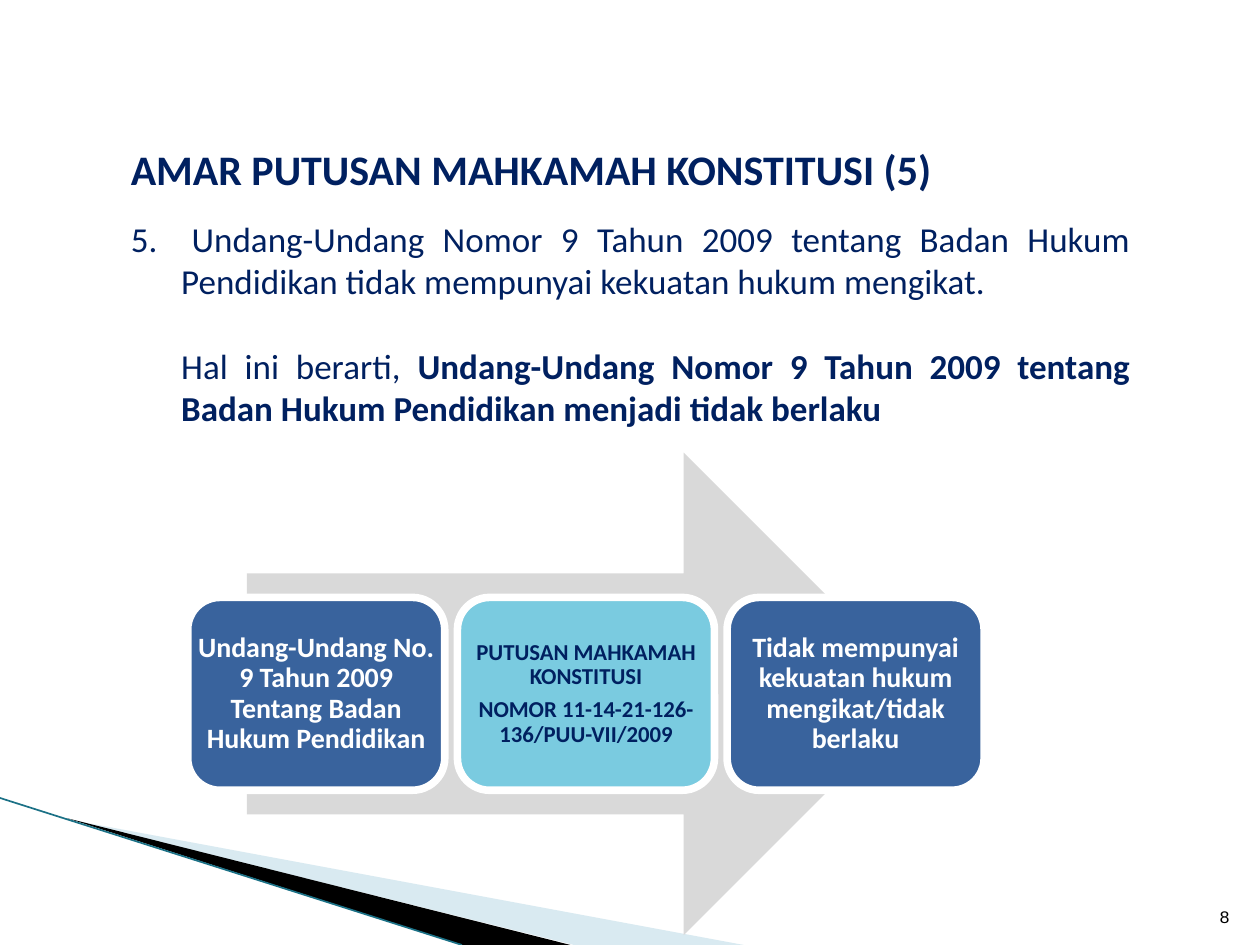
from dataclasses import dataclass

from lxml import etree
from pptx import Presentation
from pptx.dml.color import RGBColor
from pptx.enum.shapes import MSO_CONNECTOR, MSO_SHAPE
from pptx.enum.text import MSO_ANCHOR, PP_ALIGN
from pptx.oxml.ns import qn
from pptx.util import Pt

ARROW, ROUNDED = MSO_SHAPE.RIGHT_ARROW, MSO_SHAPE.ROUNDED_RECTANGLE
STRAIGHT = MSO_CONNECTOR.STRAIGHT
TOP, MIDDLE, BOTTOM = MSO_ANCHOR.TOP, MSO_ANCHOR.MIDDLE, MSO_ANCHOR.BOTTOM
CENTER, RIGHT, JUSTIFY = PP_ALIGN.CENTER, PP_ALIGN.RIGHT, PP_ALIGN.JUSTIFY


@dataclass(frozen=True)
class Theme:
    font: str = "Calibri"
    number_font: str = "Courier New"
    navy: str = "002060"
    blue: str = "39639D"
    cyan: str = "7ACBE0"
    grey: str = "D9D9D9"
    pale: str = "A0CBDC"
    teal: str = "1B7186"
    white: str = "FFFFFF"
    black: str = "000000"
    title: int = 24
    body: int = 20
    step: int = 16
    small: int = 13
    number: int = 10


class SlideBuilder:
    def __init__(self, slide, theme):
        self.s, self.theme = slide, theme

    def paint(self, sp, color, line=None, width=0):
        sp.shadow.inherit = False
        sp.fill.solid()
        sp.fill.fore_color.rgb = RGBColor.from_string(color)
        if line:
            sp.line.color.rgb = RGBColor.from_string(line)
            sp.line.width = Pt(width)
        else:
            sp.line.fill.background()

    def wedge(self, points, color, opacity=None):
        (x, y), *rest = [(Pt(px), Pt(py)) for px, py in points]
        builder = self.s.shapes.build_freeform(x, y)
        builder.add_line_segments(rest, close=True)
        sp = builder.convert_to_shape()
        self.paint(sp, color)
        if opacity:
            clr = next(sp.fill._xPr.iter(qn("a:srgbClr")))
            etree.SubElement(clr, qn("a:alpha"), val=str(opacity * 1000))

    def line(self, x1, y1, x2, y2, color, width):
        cxn = self.s.shapes.add_connector(STRAIGHT, Pt(x1), Pt(y1), Pt(x2), Pt(y2))
        cxn.line.color.rgb = RGBColor.from_string(color)
        cxn.line.width = Pt(width)
        etree.SubElement(cxn._element.spPr, qn("a:effectLst"))

    def shape(self, kind, x, y, w, h, color, line=None, width=0):
        sp = self.s.shapes.add_shape(kind, Pt(x), Pt(y), Pt(w), Pt(h))
        self.paint(sp, color, line, width)
        return sp

    def text_box(self, x, y, w, h, anchor=TOP):
        tf = self.s.shapes.add_textbox(Pt(x), Pt(y), Pt(w), Pt(h)).text_frame
        tf.word_wrap = True
        tf.vertical_anchor = anchor
        return tf

    def paragraph(self, tf, runs, size, color, align, bold=False, before=0,
                  indent=0, hanging=0, font=None):
        """Fill the first empty paragraph or add one; runs are (text, bold)."""
        p = tf.paragraphs[0]
        if p.runs:
            p = tf.add_paragraph()
        p.alignment = align
        if before:
            p.space_before = Pt(before)
        if indent:
            pPr = p._p.get_or_add_pPr()
            pPr.set("marL", str(Pt(indent)))
            pPr.set("indent", str(Pt(-hanging)))
        p.font.name = font or self.theme.font
        p.font.size = Pt(size)
        p.font.bold = bold
        p.font.color.rgb = RGBColor.from_string(color)
        for text, strong in runs:
            r = p.add_run()
            r.text = text
            if strong:
                r.font.bold = True
        return p

    def step(self, x, y, w, h, lines, fill, color, size):
        sp = self.shape(ROUNDED, x, y, w, h, fill, self.theme.white, 4.33)
        tf = sp.text_frame
        tf.word_wrap = True
        tf.vertical_anchor = MIDDLE
        tf.margin_left = tf.margin_right = tf.margin_top = tf.margin_bottom = 0
        for i, text in enumerate(lines):
            p = self.paragraph(tf, [(text, False)], size, color, CENTER, bold=True,
                               before=0.35 * size if i else 0)
            p.line_spacing = 0.9


def main():
    prs = Presentation()
    prs.slide_width, prs.slide_height = Pt(720), Pt(540)
    t = Theme()
    b = SlideBuilder(prs.slides.add_slide(prs.slide_layouts[6]), t)

    # Corner decoration
    b.wedge([(39.6, 468.4), (425, 540), (328, 540)], t.pale, opacity=40)
    b.wedge([(38.4, 467.6), (326, 540), (264, 540)], t.black)
    b.line(0, 456, 264, 540, t.teal, 0.95)

    # Title and ruling
    tf = b.text_box(67.7, 78.5, 585.4, 170.6)
    b.paragraph(tf, [("AMAR PUTUSAN MAHKAMAH KONSTITUSI (5)", False)],
                t.title, t.navy, JUSTIFY, bold=True)
    b.paragraph(tf, [("5. \tUndang-Undang Nomor 9 Tahun 2009 tentang Badan Hukum "
                      "Pendidikan tidak mempunyai kekuatan hukum mengikat.", False)],
                t.body, t.navy, JUSTIFY, before=13.4, indent=28.8, hanging=28.8)
    b.paragraph(tf, [("Hal ini berarti, ", False),
                     ("Undang-Undang Nomor 9 Tahun 2009 tentang Badan Hukum "
                      "Pendidikan menjadi tidak berlaku", True)],
                t.body, t.navy, JUSTIFY, before=24.4, indent=28.8)

    # Process arrow with its three steps
    b.shape(ARROW, 141.1, 258.7, 387.4, 275.6, t.grey)
    steps = [
        (["Undang-Undang No. 9 Tahun 2009 Tentang Badan Hukum Pendidikan"],
         t.blue, t.white, t.step),
        (["PUTUSAN MAHKAMAH KONSTITUSI", "NOMOR 11-14-21-126-136/PUU-VII/2009"],
         t.cyan, t.navy, t.small),
        (["Tidak mempunyai kekuatan hukum mengikat/tidak berlaku"],
         t.blue, t.white, t.step),
    ]
    for i, (lines, fill, color, size) in enumerate(steps):
        b.step(107.3 + 154.1 * i, 341.4, 146.9, 110.2, lines, fill, color, size)

    # Slide number
    tf = b.text_box(681, 504.7, 28.8, 28.8, BOTTOM)
    b.paragraph(tf, [("8", False)], t.number, t.black, RIGHT, font=t.number_font)

    prs.save("out.pptx")


if __name__ == "__main__":
    main()
